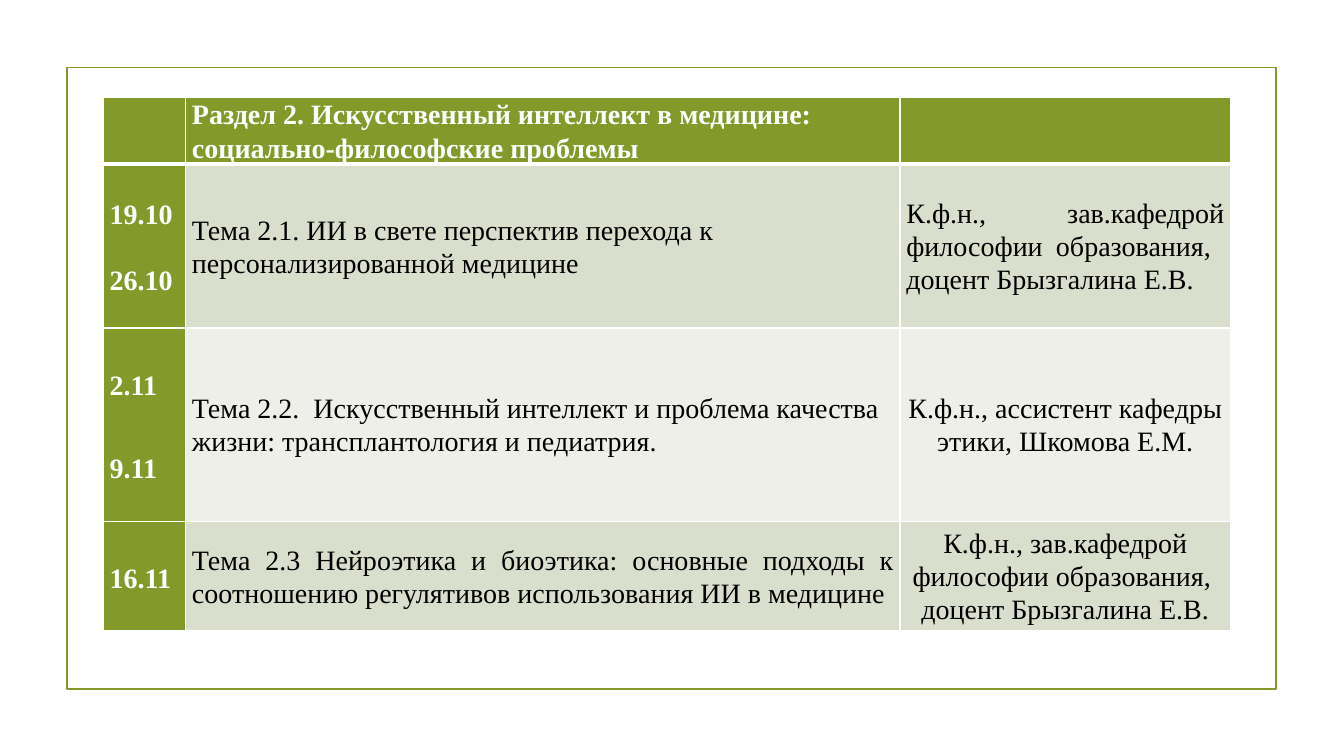
from dataclasses import dataclass

import lxml.etree
import pptx
import pptx.dml.color
import pptx.enum.shapes
import pptx.enum.text
import pptx.oxml.ns
import pptx.table
import pptx.util

Pt = pptx.util.Pt
Align = pptx.enum.text.PP_ALIGN
Anchor = pptx.enum.text.MSO_ANCHOR

COLORS = {
    "olive": "83992A",
    "band_dark": "D9DECD",
    "band_light": "EDEFE8",
    "white": "FFFFFF",
    "black": "000000",
}
FONT_NAME = "Times New Roman"
FONT_SIZE = 20
LINE_SPACING = 1.07
SIDE_MARGIN = 4.5
COLUMN_WIDTHS = (58.8, 510.3, 236.1)
HEADER_HEIGHT = 47.5
HEADING = "Раздел 2. Искусственный интеллект в медицине: социально-философские проблемы"
DEPARTMENT_HEAD = "К.ф.н., зав.кафедрой философии образования,  доцент Брызгалина Е.В."


@dataclass(frozen=True)
class Topic:
    dates: tuple[str, ...]
    date_top: float
    date_gap: float
    theme: str
    theme_align: Align
    lecturer: str
    lecturer_align: Align
    band: str
    height: float


TOPICS = (
    Topic(("19.10", "26.10"), 23.7, 23.7,
          "Тема 2.1. ИИ в свете перспектив перехода к персонализированной медицине",
          Align.LEFT, DEPARTMENT_HEAD, Align.JUSTIFY, "band_dark", 117),
    Topic(("2.11", "9.11"), 29, 35.5,
          "Тема 2.2.  Искусственный интеллект и проблема качества жизни: "
          "трансплантология и педиатрия.",
          Align.LEFT, "К.ф.н., ассистент кафедры этики, Шкомова Е.М.", Align.CENTER,
          "band_light", 138),
    Topic(("16.11",), 29, 0,
          "Тема 2.3 Нейроэтика и биоэтика: основные подходы к соотношению "
          "регулятивов использования ИИ в медицине",
          Align.JUSTIFY, DEPARTMENT_HEAD, Align.CENTER, "band_dark", 78.5),
)


def rgb(color: str) -> pptx.dml.color.RGBColor:
    return pptx.dml.color.RGBColor.from_string(COLORS[color])


def set_borders(cell: pptx.table._Cell, top: float, bottom: float) -> None:
    """Give the cell white edges; the side edges are 1 pt wide."""
    properties = cell._tc.get_or_add_tcPr()
    edges = (("lnL", 1), ("lnR", 1), ("lnT", top), ("lnB", bottom))
    for position, (tag, width) in enumerate(edges):
        edge = lxml.etree.Element(pptx.oxml.ns.qn(f"a:{tag}"), w=str(Pt(width)))
        fill = lxml.etree.SubElement(edge, pptx.oxml.ns.qn("a:solidFill"))
        lxml.etree.SubElement(fill, pptx.oxml.ns.qn("a:srgbClr"), val=COLORS["white"])
        properties.insert(position, edge)


def format_cell(cell: pptx.table._Cell, fill: str, top: float = 1, bottom: float = 1) -> None:
    cell.fill.solid()
    cell.fill.fore_color.rgb = rgb(fill)
    cell.margin_left = cell.margin_right = Pt(SIDE_MARGIN)
    cell.margin_top = cell.margin_bottom = Pt(0)
    cell.vertical_anchor = Anchor.MIDDLE
    set_borders(cell, top, bottom)


def write(cell: pptx.table._Cell, lines: tuple[str, ...], align: Align,
          color: str, bold: bool, gap: float = 0) -> None:
    """Write one paragraph per line, with the gap between neighbours."""
    for index, line in enumerate(lines):
        paragraph = cell.text_frame.add_paragraph() if index else cell.text_frame.paragraphs[0]
        paragraph.alignment = align
        paragraph.line_spacing = LINE_SPACING
        if index:
            paragraph.space_before = Pt(gap)
        run = paragraph.add_run()
        run.text = line
        run.font.name = FONT_NAME
        run.font.size = Pt(FONT_SIZE)
        run.font.bold = bold
        run.font.color.rgb = rgb(color)


def fill_topic(row: pptx.table._Row, topic: Topic, top: float) -> None:
    row.height = Pt(topic.height)
    date, theme, lecturer = row.cells
    for cell, fill in ((date, "olive"), (theme, topic.band), (lecturer, topic.band)):
        format_cell(cell, fill, top=top)
    date.vertical_anchor = Anchor.TOP
    date.margin_top = Pt(topic.date_top)
    write(date, topic.dates, Align.JUSTIFY, "white", True, topic.date_gap)
    write(theme, (topic.theme,), topic.theme_align, "black", False)
    write(lecturer, (topic.lecturer,), topic.lecturer_align, "black", False)


def main() -> None:
    presentation = pptx.Presentation()
    presentation.slide_width, presentation.slide_height = Pt(960), Pt(540)
    slide = presentation.slides.add_slide(presentation.slide_layouts[6])

    frame = slide.shapes.add_shape(
        pptx.enum.shapes.MSO_SHAPE.RECTANGLE, Pt(47.7), Pt(48.2), Pt(864), Pt(444))
    frame.shadow.inherit = False
    frame.fill.background()
    frame.line.color.rgb = rgb("olive")
    frame.line.width = Pt(1.25)

    height = HEADER_HEIGHT + sum(topic.height for topic in TOPICS)
    schedule = slide.shapes.add_table(
        len(TOPICS) + 1, len(COLUMN_WIDTHS),
        Pt(73.8), Pt(69.8), Pt(sum(COLUMN_WIDTHS)), Pt(height)).table
    schedule.horz_banding = False
    for column, width in zip(schedule.columns, COLUMN_WIDTHS):
        column.width = Pt(width)

    header, *topic_rows = schedule.rows
    header.height = Pt(HEADER_HEIGHT)
    for cell in header.cells:
        format_cell(cell, "olive", bottom=3)
    write(header.cells[1], (HEADING,), Align.LEFT, "white", True)

    for index, (row, topic) in enumerate(zip(topic_rows, TOPICS)):
        fill_topic(row, topic, top=1 if index else 3)

    presentation.save("out.pptx")


if __name__ == "__main__":
    main()
